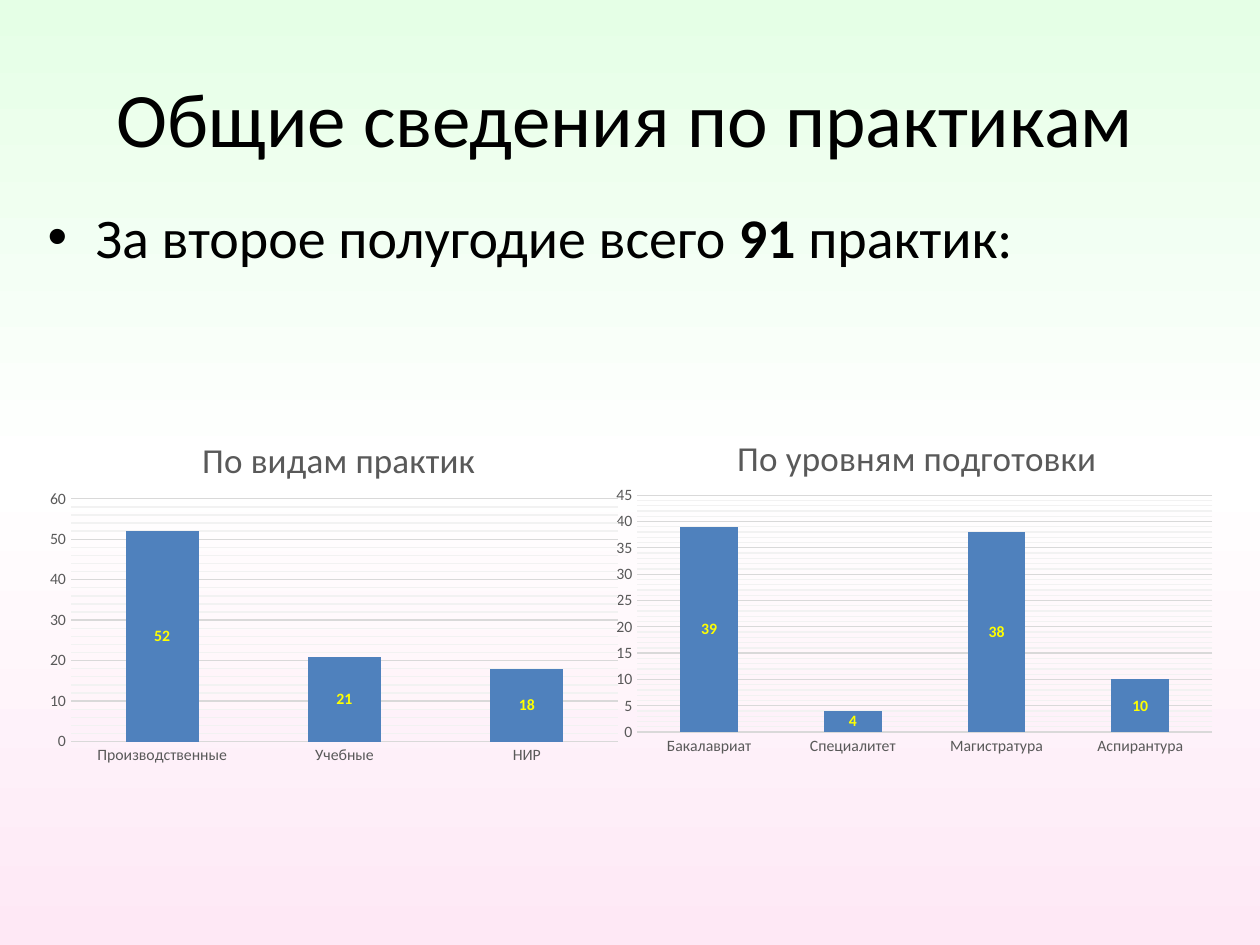
"""Build a slide of practice totals with two stacked column charts."""
from copy import deepcopy

from lxml import etree
from pptx import Presentation
from pptx.chart.data import CategoryChartData
from pptx.dml.color import RGBColor
from pptx.enum.chart import XL_CHART_TYPE, XL_LABEL_POSITION, XL_TICK_MARK
from pptx.enum.text import MSO_ANCHOR, PP_ALIGN
from pptx.oxml.ns import qn
from pptx.util import Inches, Pt

STACKED = XL_CHART_TYPE.COLUMN_STACKED
LABEL_CENTER = XL_LABEL_POSITION.CENTER
NO_TICK = XL_TICK_MARK.NONE
MIDDLE = MSO_ANCHOR.MIDDLE
CENTER = PP_ALIGN.CENTER

THEME = {
    "font": "Calibri",
    "background": [(0, "E5FFE6"), (0.5, "FFFFFF"), (1, "FEE8F5")],
    "bar": "4F81BD",
    "grid": "D9D9D9",
    "minor_grid": "F2F2F2",
    "title": {"size": 44, "color": "000000"},
    "body": {"size": 32, "color": "000000"},
    "chart": {"size": 10, "color": "000000"},
    "chart_title": {"size": 20, "color": "595959", "bold": False},
    "axis": {"size": 9, "color": "595959"},
    "label": {"size": 9, "color": "FFFF00", "bold": True},
}


def style_font(font, style, **extra):
    """Apply a theme text style to a font."""
    values = {"name": THEME["font"], **THEME[style], **extra}
    font.color.rgb = RGBColor.from_string(values.pop("color"))
    values["size"] = Pt(values["size"])
    for name, value in values.items():
        setattr(font, name, value)


def place_part(part, index, values):
    """Give a chart part a manual layout in fractions of the chart."""
    for old in part.findall(qn("c:layout")):
        part.remove(old)
    layout = etree.Element(qn("c:layout"))
    manual = etree.SubElement(layout, qn("c:manualLayout"))
    for name, value in values.items():
        etree.SubElement(manual, qn(f"c:{name}")).set("val", str(value))
    part.insert(index, layout)


deck = Presentation()
deck.slide_width, deck.slide_height = Inches(10), Inches(7.5)
page = deck.slides.add_slide(deck.slide_layouts[6])

fill = page.background.fill
fill.gradient()
fill.gradient_angle = 270
stop_list = page.element.find(".//" + qn("a:gsLst"))
stop_list.insert(1, deepcopy(stop_list[0]))
for stop, (position, color) in zip(fill.gradient_stops, THEME["background"]):
    stop.position = position
    stop.color.rgb = RGBColor.from_string(color)

TEXTS = [
    ("title", (0.2, 0.3, 9.53, 1.25), [("Общие сведения по практикам", False)]),
    ("body", (0.28, 1.56, 9.45, 4.95),
     [("За второе полугодие всего ", False), ("91", True), (" практик:", False)]),
]
for style, place, spans in TEXTS:
    box = page.shapes.add_textbox(*map(Inches, place))
    box.text_frame.word_wrap = True
    para = box.text_frame.paragraphs[0]
    for text, bold in spans:
        span = para.add_run()
        span.text = text
        style_font(span.font, style, bold=bold)
    if style == "title":
        box.text_frame.vertical_anchor = MIDDLE
        para.alignment = CENTER
    else:
        para.space_before = Pt(6.4)
        properties = para._p.get_or_add_pPr()
        properties.set("marL", str(Inches(0.38)))
        properties.set("indent", str(Inches(-0.38)))
        etree.SubElement(properties, qn("a:buFont")).set("typeface", "Arial")
        etree.SubElement(properties, qn("a:buChar")).set("char", "•")

CHARTS = [
    ("По уровням подготовки", (4.76, 3.19, 4.96, 2.85), 0.21, 45, 5,
     {"Бакалавриат": 39, "Специалитет": 4, "Магистратура": 38, "Аспирантура": 10}),
    ("По видам практик", (0.28, 3.2, 4.72, 2.92), 0.27, 60, 10,
     {"Производственные": 52, "Учебные": 21, "НИР": 18}),
]
for heading, place, title_left, top, step, counts in CHARTS:
    data = CategoryChartData()
    data.categories = list(counts)
    data.add_series("Series 1", list(counts.values()))
    chart = page.shapes.add_chart(STACKED, *map(Inches, place), data).chart
    chart.has_legend = False
    style_font(chart.font, "chart")

    title_frame = chart.chart_title.text_frame
    title_frame.text = heading
    style_font(title_frame.paragraphs[0].runs[0].font, "chart_title")
    place_part(chart.chart_title._element, 1,
               {"xMode": "edge", "yMode": "edge", "x": title_left, "y": 0.07})
    place_part(chart._chartSpace.chart.plotArea, 0,
               {"layoutTarget": "inner", "xMode": "edge", "yMode": "edge",
                "x": 0.06, "y": 0.26, "w": 0.92, "h": 0.66})

    for axis in (chart.category_axis, chart.value_axis):
        axis.major_tick_mark = axis.minor_tick_mark = NO_TICK
        axis.format.line.fill.background()
        style_font(axis.tick_labels.font, "axis")
    values_axis = chart.value_axis
    scale = {"minimum_scale": 0, "maximum_scale": top, "major_unit": step,
             "minor_unit": step // 5, "has_major_gridlines": True,
             "has_minor_gridlines": True}
    for name, value in scale.items():
        setattr(values_axis, name, value)
    grid_line = values_axis.major_gridlines.format.line
    grid_line.color.rgb = RGBColor.from_string(THEME["grid"])
    grid_line.width = Pt(0.75)
    axis_element = values_axis._element
    minor_grid = axis_element.find(qn("c:minorGridlines"))
    major_format = axis_element.find(qn("c:majorGridlines")).find(qn("c:spPr"))
    minor_grid.append(deepcopy(major_format))
    minor_grid.find(".//" + qn("a:srgbClr")).set("val", THEME["minor_grid"])

    plot = chart.plots[0]
    plot.gap_width, plot.overlap, plot.vary_by_categories = 150, 100, False
    bars = plot.series[0]
    bars.format.fill.solid()
    bars.format.fill.fore_color.rgb = RGBColor.from_string(THEME["bar"])
    labels = bars.data_labels
    labels.show_value = True
    labels.position = LABEL_CENTER
    style_font(labels.font, "label")

deck.save("out.pptx")
